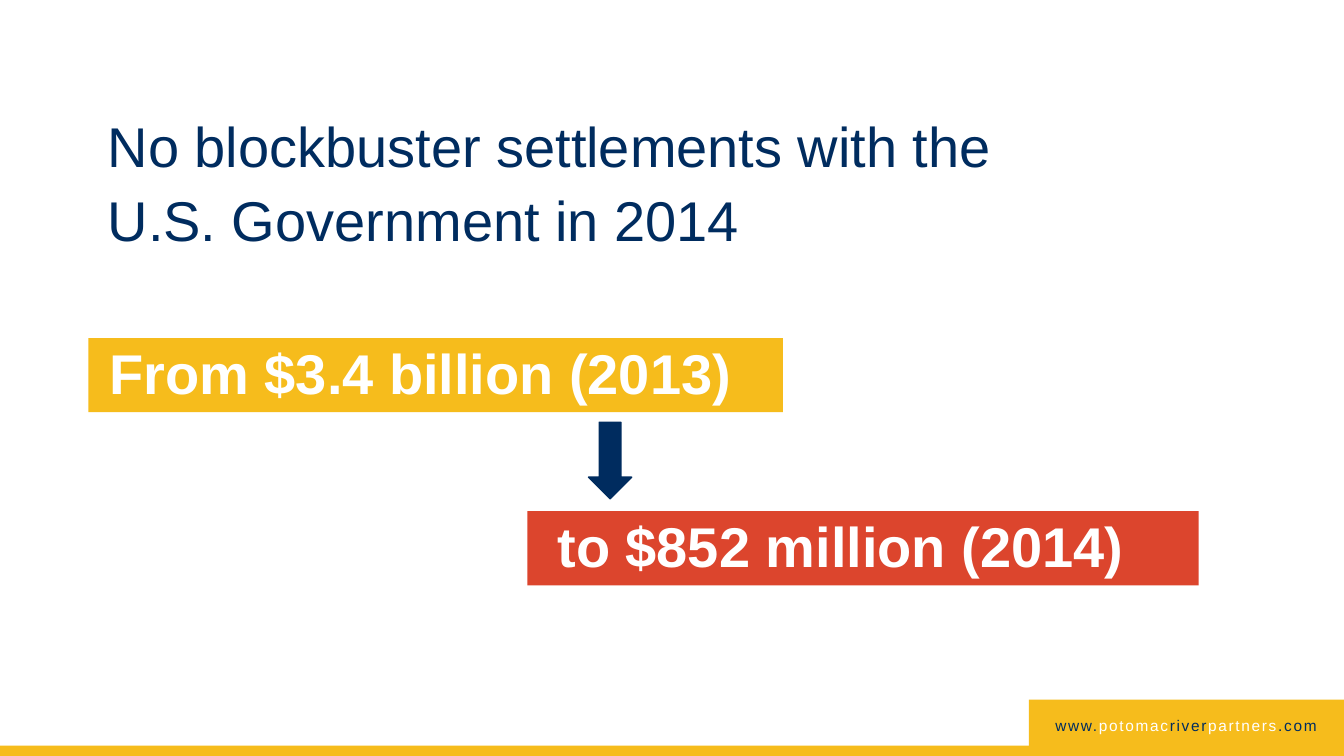
import pptx
import pptx.util
import pptx.dml.color
import pptx.enum.shapes
import pptx.enum.text

Cm = pptx.util.Cm
Pt = pptx.util.Pt
RGBColor = pptx.dml.color.RGBColor
SHAPE = pptx.enum.shapes.MSO_SHAPE
ALIGN = pptx.enum.text.PP_ALIGN
ANCHOR = pptx.enum.text.MSO_ANCHOR
AUTO_SIZE = pptx.enum.text.MSO_AUTO_SIZE

NAVY = RGBColor(0x00, 0x2C, 0x5F)
YELLOW = RGBColor(0xF6, 0xBC, 0x1C)
RED = RGBColor(0xDC, 0x45, 0x2D)
WHITE = RGBColor(0xFF, 0xFF, 0xFF)


def add_block(shapes, kind, left, top, width, height, color):
    block = shapes.add_shape(kind, Cm(left), Cm(top), Cm(width), Cm(height))
    block.shadow.inherit = False
    block.fill.solid()
    block.fill.fore_color.rgb = color
    block.line.fill.background()
    return block


def add_run(paragraph, text, size, color, bold=False):
    run = paragraph.add_run()
    run.text = text
    run.font.name = "Arial"
    run.font.size = Pt(size)
    run.font.bold = bold
    run.font.color.rgb = color
    return run


deck = pptx.Presentation()
deck.slide_width = Cm(33.87)
deck.slide_height = Cm(19.05)
slide = deck.slides.add_slide(deck.slide_layouts[5])

headline = slide.shapes.title
headline.left, headline.top = Cm(2.46), Cm(2.51)
headline.width, headline.height = Cm(25.96), Cm(6.02)
headline.text_frame.word_wrap = True
headline.text_frame.auto_size = AUTO_SIZE.NONE
headline.text_frame.vertical_anchor = ANCHOR.TOP
headline_lines = headline.text_frame.paragraphs[0]
headline_lines.alignment = ALIGN.LEFT
headline_lines.line_spacing = Pt(53)
add_run(headline_lines, "No blockbuster settlements with the", 40, NAVY)
headline_lines.add_line_break()
add_run(headline_lines, "U.S. Government in 2014", 40, NAVY)

add_block(slide.shapes, SHAPE.RECTANGLE, 0, 18.79, 33.87, 0.28, YELLOW)
add_block(slide.shapes, SHAPE.RECTANGLE, 25.93, 17.63, 7.94, 1.17, YELLOW)

website = slide.shapes.add_textbox(Cm(26.31), Cm(17.93), Cm(7.16), Cm(0.74))
website.text_frame.word_wrap = False
website.text_frame.auto_size = AUTO_SIZE.SHAPE_TO_FIT_TEXT
address = website.text_frame.paragraphs[0]
address.alignment = ALIGN.CENTER
for part, color in [
    ("www.", NAVY),
    ("potomac", WHITE),
    ("river", NAVY),
    ("partners", WHITE),
    (".com", NAVY),
]:
    run = add_run(address, part, 11, color)
    run.font._element.set("spc", "120")

for amount, color, left, top, width, indent in [
    ("From $3.4 billion (2013)", YELLOW, 2.23, 8.52, 17.5, 0.28),
    ("to $852 million (2014)", RED, 13.29, 12.88, 16.92, 0.51),
]:
    banner = slide.shapes.add_group_shape()
    add_block(banner.shapes, SHAPE.RECTANGLE, left, top, width, 1.87, color)
    label = banner.shapes.add_textbox(
        Cm(left + indent), Cm(top - 0.16), Cm(width), Cm(2.57)
    )
    label.text_frame.word_wrap = True
    amount_line = label.text_frame.paragraphs[0]
    amount_line.line_spacing = Pt(49)
    add_run(amount_line, amount, 40, WHITE, bold=True)

drop = add_block(slide.shapes, SHAPE.DOWN_ARROW, 14.83, 10.64, 1.09, 1.93, NAVY)
drop.line.color.rgb = NAVY
drop.line.width = Pt(1)

deck.save("out.pptx")
